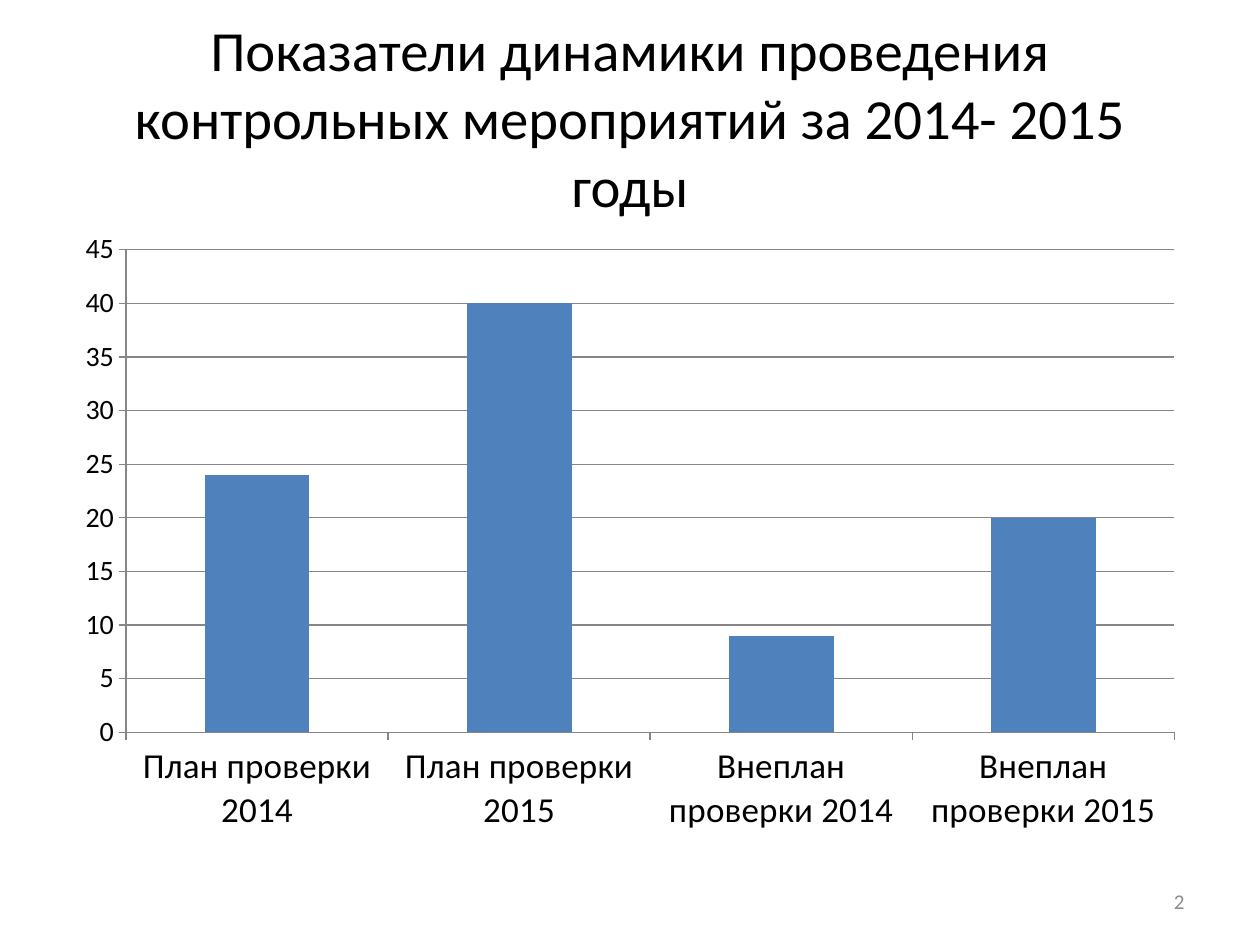
from dataclasses import dataclass

from pptx import Presentation
from pptx.chart.data import CategoryChartData
from pptx.dml.color import RGBColor
from pptx.enum.chart import XL_CHART_TYPE as ChartType, XL_TICK_MARK as Tick
from pptx.enum.text import MSO_ANCHOR as Anchor, PP_ALIGN as Align
from pptx.util import Inches, Pt

SLIDE_WIDTH, SLIDE_HEIGHT = Inches(10), Inches(7.5)


@dataclass(frozen=True)
class Theme:
    font: str = "Calibri"
    ink: str = "000000"
    muted: str = "8C8C8C"
    rule: str = "868686"
    bar: str = "4F81BD"
    title_size: float = 32.4
    category_size: float = 20
    value_size: float = 16
    number_size: float = 12


@dataclass(frozen=True)
class Area:
    left: float
    top: float
    width: float
    height: float

    def emu(self) -> tuple[int, int, int, int]:
        return (int(self.left * SLIDE_WIDTH), int(self.top * SLIDE_HEIGHT),
                int(self.width * SLIDE_WIDTH), int(self.height * SLIDE_HEIGHT))


@dataclass(frozen=True)
class Label:
    text: str
    area: Area
    size: float
    color: str
    align: Align


@dataclass(frozen=True)
class Inspection:
    name: str
    count: int


THEME = Theme()
LABELS = (
    Label("Показатели динамики проведения контрольных мероприятий за 2014- 2015 годы",
          Area(0.05, 0.04, 0.9, 1 / 6), THEME.title_size, THEME.ink, Align.CENTER),
    Label("2", Area(0.717, 0.927, 0.233, 0.053),
          THEME.number_size, THEME.muted, Align.RIGHT),
)
INSPECTIONS = (
    Inspection("План проверки 2014", 24),
    Inspection("План проверки 2015", 40),
    Inspection("Внеплан проверки 2014", 9),
    Inspection("Внеплан проверки 2015", 20),
)
CHART_AREA = Area(0.05, 0.233, 0.9, 0.66)


def style_font(font, size: float, color: str) -> None:
    font.name = THEME.font
    font.size = Pt(size)
    font.color.rgb = RGBColor.from_string(color)


def style_line(line) -> None:
    line.color.rgb = RGBColor.from_string(THEME.rule)
    line.width = Pt(0.75)


def draw_label(slide, label: Label) -> None:
    frame = slide.shapes.add_textbox(*label.area.emu()).text_frame
    frame.word_wrap = True
    frame.vertical_anchor = Anchor.MIDDLE
    frame.text = label.text
    paragraph = frame.paragraphs[0]
    paragraph.alignment = label.align
    style_font(paragraph.runs[0].font, label.size, label.color)


def style_axis(axis, size: float) -> None:
    axis.major_tick_mark = Tick.OUTSIDE
    axis.minor_tick_mark = Tick.NONE
    style_line(axis.format.line)
    style_font(axis.tick_labels.font, size, THEME.ink)


def draw_chart(slide, inspections: tuple[Inspection, ...], area: Area) -> None:
    data = CategoryChartData()
    data.categories = [inspection.name for inspection in inspections]
    data.add_series("Series 1", [inspection.count for inspection in inspections])
    chart = slide.shapes.add_chart(ChartType.COLUMN_CLUSTERED, *area.emu(), data).chart
    chart.has_title = False
    chart.has_legend = False
    style_font(chart.font, 10, THEME.ink)
    style_axis(chart.category_axis, THEME.category_size)
    counts = chart.value_axis
    style_axis(counts, THEME.value_size)
    counts.minimum_scale, counts.maximum_scale, counts.major_unit = 0, 45, 5
    counts.has_major_gridlines = True
    style_line(counts.major_gridlines.format.line)
    plot = chart.plots[0]
    plot.gap_width = 150
    plot.vary_by_categories = False
    bars = plot.series[0].format.fill
    bars.solid()
    bars.fore_color.rgb = RGBColor.from_string(THEME.bar)


def main() -> None:
    deck = Presentation()
    deck.slide_width, deck.slide_height = SLIDE_WIDTH, SLIDE_HEIGHT
    slide = deck.slides.add_slide(deck.slide_layouts[6])
    for label in LABELS:
        draw_label(slide, label)
    draw_chart(slide, INSPECTIONS, CHART_AREA)
    deck.save("out.pptx")


if __name__ == "__main__":
    main()
